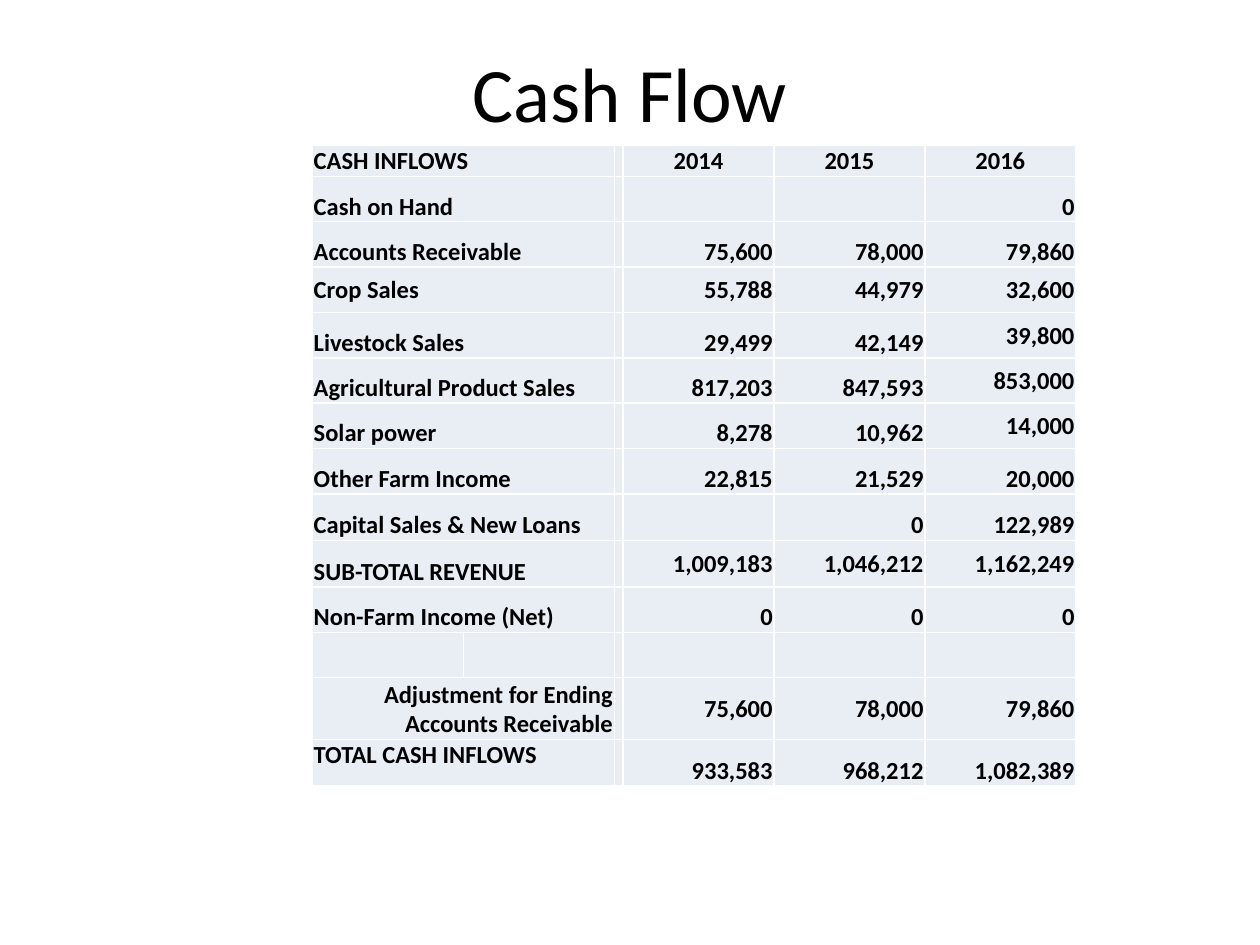
from dataclasses import dataclass

from lxml import etree
from pptx import Presentation
from pptx.dml.color import RGBColor
from pptx.enum.text import MSO_ANCHOR, PP_ALIGN
from pptx.oxml.ns import qn
from pptx.util import Inches, Pt

LEFT, CENTER, RIGHT = PP_ALIGN.LEFT, PP_ALIGN.CENTER, PP_ALIGN.RIGHT
ANCHORS = {"t": MSO_ANCHOR.TOP, "m": MSO_ANCHOR.MIDDLE, "b": MSO_ANCHOR.BOTTOM}


@dataclass(frozen=True)
class Theme:
    font: str = "Calibri"
    text: str = "000000"
    cell: str = "E9EDF4"
    border: str = "FFFFFF"
    title_size: int = 44
    table_size: int = 14
    border_width: int = 1


THEME = Theme()
SLIDE_WIDTH, SLIDE_HEIGHT = 10, 7.5

# Boxes: left, top, width, height
TITLE_BOX = (0.5, 0.3, 9, 0.85)
TABLE_BOX = (2.48, 1.15, 6.06, 5.04)

# Two label columns, a narrow gap and three years
SPACER_WIDTH = 0.07
COLUMN_COUNT, SPACER_COLUMN = 6, 2
TEXT_COLUMNS = (0, 3, 4, 5)
ROW_HEIGHT = 0.36
SPECIAL_HEIGHTS = {0: 0.25, 8: 0.37, 9: 0.37, 12: 0.49, 13: 0.37}

# Label, three years, and the vertical anchor of each of the four cells
CASH_ROWS = [
    ("CASH INFLOWS", "2014", "2015", "2016", "mmmm"),
    ("Cash on Hand", "", "", "0", "bbbb"),
    ("Accounts Receivable", "75,600", "78,000", "79,860", "bbbb"),
    ("Crop Sales", "55,788", "44,979", "32,600", "mmmm"),
    ("Livestock Sales", "29,499", "42,149", "39,800", "bbbm"),
    ("Agricultural Product Sales", "817,203", "847,593", "853,000", "bbbm"),
    ("Solar power", "8,278", "10,962", "14,000", "bbbm"),
    ("Other Farm Income", "22,815", "21,529", "20,000", "bbbb"),
    ("Capital Sales & New Loans", "", "0", "122,989", "bbbb"),
    ("SUB-TOTAL REVENUE", "1,009,183", "1,046,212", "1,162,249", "bmmm"),
    ("Non-Farm Income (Net)", "0", "0", "0", "bbbb"),
    ("", "", "", "", "bbbb"),
    ("Adjustment for Ending Accounts Receivable",
     "75,600", "78,000", "79,860", "bmmm"),
    ("TOTAL CASH INFLOWS", "933,583", "968,212", "1,082,389", "tbbb"),
]
HEADER_ROW, ADJUSTMENT_ROW = 0, 12


def set_values(target, values):
    for name, value in values.items():
        setattr(target, name, value)


def style_font(font, size, bold):
    set_values(font, {"name": THEME.font, "size": Pt(size), "bold": bold})
    font.color.rgb = RGBColor.from_string(THEME.text)


def add_title(slide, box):
    title = slide.shapes.title
    set_values(title, dict(zip(("left", "top", "width", "height"),
                               map(Inches, box))))
    title.text_frame.text = "Cash Flow"
    title.text_frame.vertical_anchor = ANCHORS["m"]
    paragraph = title.text_frame.paragraphs[0]
    paragraph.alignment = CENTER
    style_font(paragraph.runs[0].font, THEME.title_size, False)


def style_cell(cell):
    set_values(cell, {"margin_left": Inches(0.01), "margin_right": Inches(0.01),
                      "margin_top": Inches(0.01), "margin_bottom": 0})
    # Borders come before the fill in the cell properties
    properties = cell._tc.get_or_add_tcPr()
    for side in ("lnL", "lnR", "lnT", "lnB"):
        line = etree.SubElement(properties, qn(f"a:{side}"),
                                w=str(Pt(THEME.border_width)))
        fill = etree.SubElement(line, qn("a:solidFill"))
        etree.SubElement(fill, qn("a:srgbClr"), val=THEME.border)
    cell.fill.solid()
    cell.fill.fore_color.rgb = RGBColor.from_string(THEME.cell)


def write_cell(cell, text, alignment, anchor):
    cell.text = text
    cell.vertical_anchor = ANCHORS[anchor]
    paragraph = cell.text_frame.paragraphs[0]
    paragraph.alignment = alignment
    style_font(paragraph.runs[0].font, THEME.table_size, True)


def cell_alignment(row, column):
    if column == 0:
        return RIGHT if row == ADJUSTMENT_ROW else LEFT
    return CENTER if row == HEADER_ROW else RIGHT


def add_cash_table(slide, box):
    table = slide.shapes.add_table(len(CASH_ROWS), COLUMN_COUNT,
                                   *map(Inches, box)).table
    set_values(table, {"first_row": False, "horz_banding": False})

    # Grid
    column_width = (box[2] - SPACER_WIDTH) / (COLUMN_COUNT - 1)
    for index, column in enumerate(table.columns):
        column.width = Inches(
            SPACER_WIDTH if index == SPACER_COLUMN else column_width)
    for index, row in enumerate(table.rows):
        row.height = Inches(SPECIAL_HEIGHTS.get(index, ROW_HEIGHT))

    # Cells
    for cell in table.iter_cells():
        style_cell(cell)
    for row, (*texts, anchors) in enumerate(CASH_ROWS):
        if texts[0]:
            table.cell(row, 0).merge(table.cell(row, 1))
        for column, text, anchor in zip(TEXT_COLUMNS, texts, anchors):
            if text:
                write_cell(table.cell(row, column), text,
                           cell_alignment(row, column), anchor)

    # Empty cells keep the table's type size, so short rows do not grow
    for cell in table.iter_cells():
        if not cell.text:
            etree.SubElement(cell.text_frame.paragraphs[0]._p,
                             qn("a:endParaRPr"), sz=str(THEME.table_size * 100))


def main():
    presentation = Presentation()
    set_values(presentation, {"slide_width": Inches(SLIDE_WIDTH),
                              "slide_height": Inches(SLIDE_HEIGHT)})
    title_only = presentation.slide_layouts[5]
    slide = presentation.slides.add_slide(title_only)
    add_title(slide, TITLE_BOX)
    add_cash_table(slide, TABLE_BOX)
    presentation.save("out.pptx")


if __name__ == "__main__":
    main()
